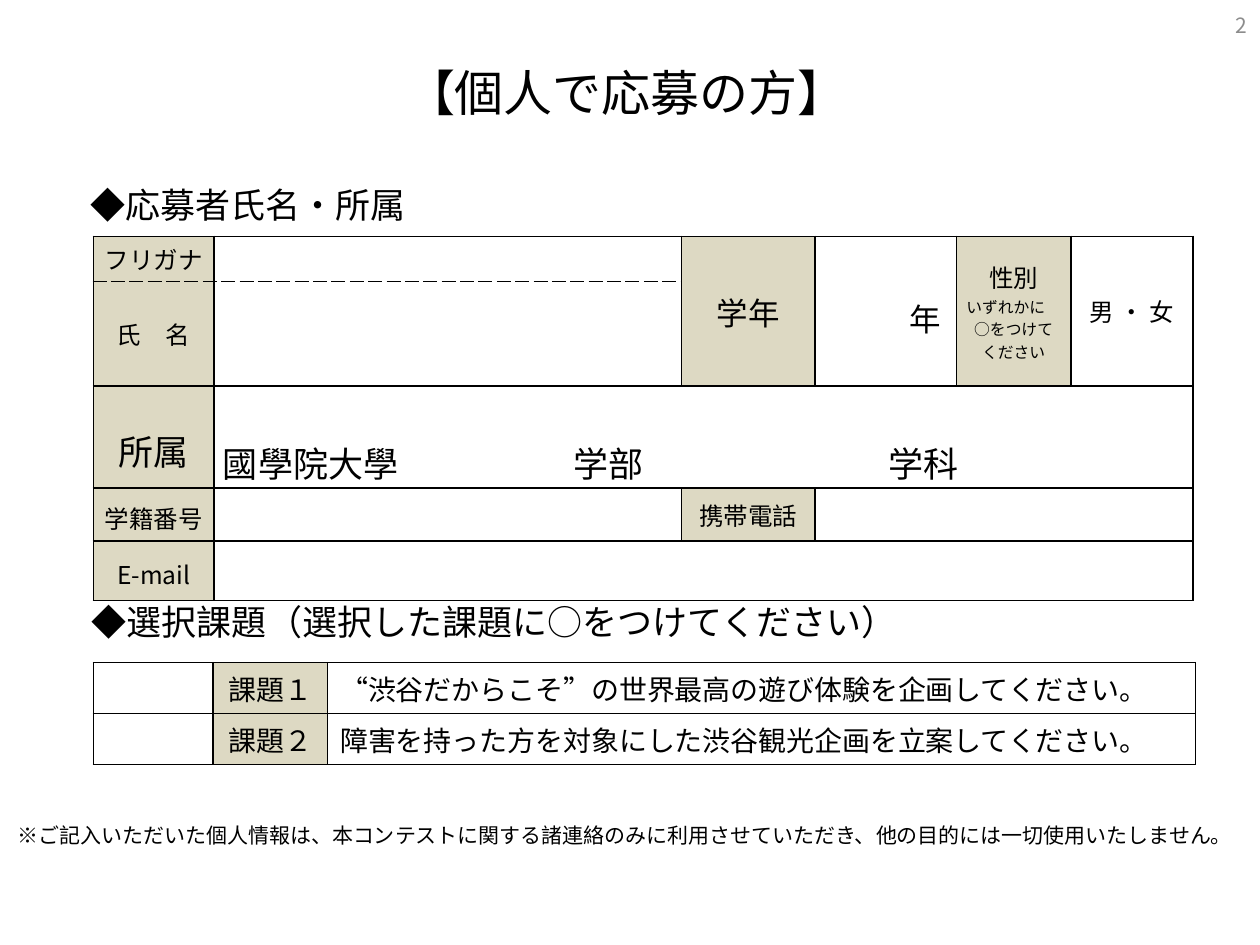
from lxml import etree
from pptx import Presentation
from pptx.dml.color import RGBColor
from pptx.enum.text import MSO_ANCHOR, PP_ALIGN
from pptx.oxml.ns import qn
from pptx.util import Inches, Pt

BLACK = RGBColor(0x00, 0x00, 0x00)
GRAY = RGBColor(0x8C, 0x8C, 0x8C)
BEIGE = RGBColor(0xDD, 0xD9, 0xC3)
LEFT, CENTER, RIGHT = PP_ALIGN.LEFT, PP_ALIGN.CENTER, PP_ALIGN.RIGHT
MIDDLE = MSO_ANCHOR.MIDDLE
FONT = "Noto Sans CJK JP"
GRID_COLUMNS, GRID_ROWS = 100, 75


class FormSlide:
    """Holds the style and the slide; lengths are units of a 100 x 75 grid."""

    def __init__(self, prs):
        self.unit_x = prs.slide_width / GRID_COLUMNS
        self.unit_y = prs.slide_height / GRID_ROWS
        self.slide = prs.slides.add_slide(prs.slide_layouts[5])

    def x(self, columns):
        return round(columns * self.unit_x)

    def y(self, rows):
        return round(rows * self.unit_y)

    def area(self, left, top, width, height):
        return self.x(left), self.y(top), self.x(width), self.y(height)

    def fill_paragraph(self, paragraph, text, size, color=BLACK, align=LEFT, spacing=None):
        paragraph.alignment = align
        if spacing:
            paragraph.line_spacing = spacing
        run = paragraph.add_run()
        run.text = text
        run.font.size = Pt(size)
        run.font.name = FONT
        run.font.color.rgb = color
        east_asian = etree.SubElement(run.font._element, qn("a:ea"))
        east_asian.set("typeface", FONT)

    def title(self, text, area):
        holder = self.slide.shapes.title
        holder.left, holder.top, holder.width, holder.height = self.area(*area)
        holder.text_frame.vertical_anchor = MIDDLE
        self.fill_paragraph(holder.text_frame.paragraphs[0], text, 28, align=CENTER)

    def text(self, text, area, size, color=BLACK, align=LEFT, wrap=True, indent=0):
        frame = self.slide.shapes.add_textbox(*self.area(*area)).text_frame
        frame.word_wrap = wrap
        frame.vertical_anchor = MIDDLE
        paragraph = frame.paragraphs[0]
        self.fill_paragraph(paragraph, text, size, color, align)
        if indent:
            properties = paragraph._p.get_or_add_pPr()
            properties.set("marL", "0")
            properties.set("indent", str(self.x(indent)))

    def heading(self, text, area):
        self.text(text, area, 20, indent=6.7)

    def table(self, left, top, widths, heights, inset_x):
        area = self.area(left, top, sum(widths), sum(heights))
        table = self.slide.shapes.add_table(len(heights), len(widths), *area).table
        table.first_row = table.horz_banding = False
        for column, width in zip(table.columns, widths):
            column.width = self.x(width)
        for row, height in zip(table.rows, heights):
            row.height = self.y(height)
        for cell in table.iter_cells():
            cell.margin_left = cell.margin_right = self.x(inset_x)
            cell.margin_top = cell.margin_bottom = 0
            cell.vertical_anchor = MIDDLE
            cell.fill.background()
            self.borders(cell)
        return table

    def borders(self, cell, **dashes):
        """Draws all four sides; B="dash" or T="dash" changes one side."""
        properties = cell._tc.get_or_add_tcPr()
        for index, side in enumerate("LRTB"):
            for old in properties.findall(qn(f"a:ln{side}")):
                properties.remove(old)
            line = etree.Element(qn(f"a:ln{side}"), w=str(Pt(1)))
            fill = etree.SubElement(line, qn("a:solidFill"))
            etree.SubElement(fill, qn("a:srgbClr"), val=str(BLACK))
            etree.SubElement(line, qn("a:prstDash"), val=dashes.get(side, "solid"))
            properties.insert(index, line)

    def cell(self, cell, text, size, align=CENTER, spacing=None):
        self.fill_paragraph(cell.text_frame.paragraphs[0], text, size,
                            align=align, spacing=spacing)

    def label(self, cell, text, size, spacing=None):
        cell.fill.solid()
        cell.fill.fore_color.rgb = BEIGE
        self.cell(cell, text, size, spacing=spacing)


def add_tab_stops(paragraph, positions):
    properties = paragraph._p.get_or_add_pPr()
    tabs = etree.SubElement(properties, qn("a:tabLst"))
    for position in positions:
        etree.SubElement(tabs, qn("a:tab"), pos=str(position), algn="l")


def add_applicant_table(form):
    table = form.table(7.4, 18.75, [9.6, 37.1, 10.6, 11.2, 9.1, 9.7],
                       [3.6, 8.3, 8.1, 4.2, 4.7], 0.7)
    for column in range(2, 6):
        table.cell(0, column).merge(table.cell(1, column))
    for row, first in ((2, 1), (3, 3), (4, 1)):
        table.cell(row, first).merge(table.cell(row, 5))
    for column in (0, 1):
        form.borders(table.cell(0, column), B="dash")
        form.borders(table.cell(1, column), T="dash")

    labels = [
        (0, 0, "フリガナ", 14, None),
        (1, 0, "氏　名", 14, None),
        (2, 0, "所属", 20, 1.5),
        (3, 0, "学籍番号", 14, 1.15),
        (4, 0, "E-mail", 14, 1.15),
        (0, 2, "学年", 18, None),
        (3, 2, "携帯電話", 14, None),
        (0, 4, "性別", 14, None),
    ]
    for row, column, text, size, spacing in labels:
        form.label(table.cell(row, column), text, size, spacing)
    for hint in ("いずれかに　○をつけて", "ください"):
        form.fill_paragraph(table.cell(0, 4).text_frame.add_paragraph(), hint, 9, align=CENTER)

    year = table.cell(0, 3)
    year.margin_right = form.x(1.2)
    year.margin_top = form.y(1)
    form.cell(year, "年", 18, RIGHT)
    form.cell(table.cell(0, 5), "男 ・ 女", 14)

    affiliation = table.cell(2, 1)
    form.cell(affiliation, "國學院大學\t学部\t学科", 20, LEFT, 2)
    character = Pt(20)
    add_tab_stops(affiliation.text_frame.paragraphs[0], [10 * character, 19 * character])


def add_task_table(form):
    tasks = [
        ("課題１", "“渋谷だからこそ”の世界最高の遊び体験を企画してください。"),
        ("課題２", "障害を持った方を対象にした渋谷観光企画を立案してください。"),
    ]
    table = form.table(7.4, 52.6, [9.5, 9.1, 68.9], [4.05] * len(tasks), 1)
    for row, (name, description) in enumerate(tasks):
        form.label(table.cell(row, 1), name, 16)
        form.cell(table.cell(row, 2), description, 16, LEFT)


def main():
    prs = Presentation()
    prs.slide_width, prs.slide_height = Inches(10), Inches(7.5)
    form = FormSlide(prs)
    form.title("【個人で応募の方】", (4.7, 3.8, 90, 7))
    add_applicant_table(form)
    form.heading("◆応募者氏名・所属", (-0.5, 14, 77, 4.4))
    form.heading("◆選択課題（選択した課題に○をつけてください）", (-0.4, 47.1, 97.5, 4.4))
    add_task_table(form)
    form.text("※ご記入いただいた個人情報は、本コンテストに関する諸連絡のみに利用させていただき、"
              "他の目的には一切使用いたしません。", (0.4, 64.8, 99.6, 3), 12, wrap=False)
    form.text("2", (76.7, 0, 23.3, 4), 12, GRAY, RIGHT)
    prs.save("out.pptx")


if __name__ == "__main__":
    main()
